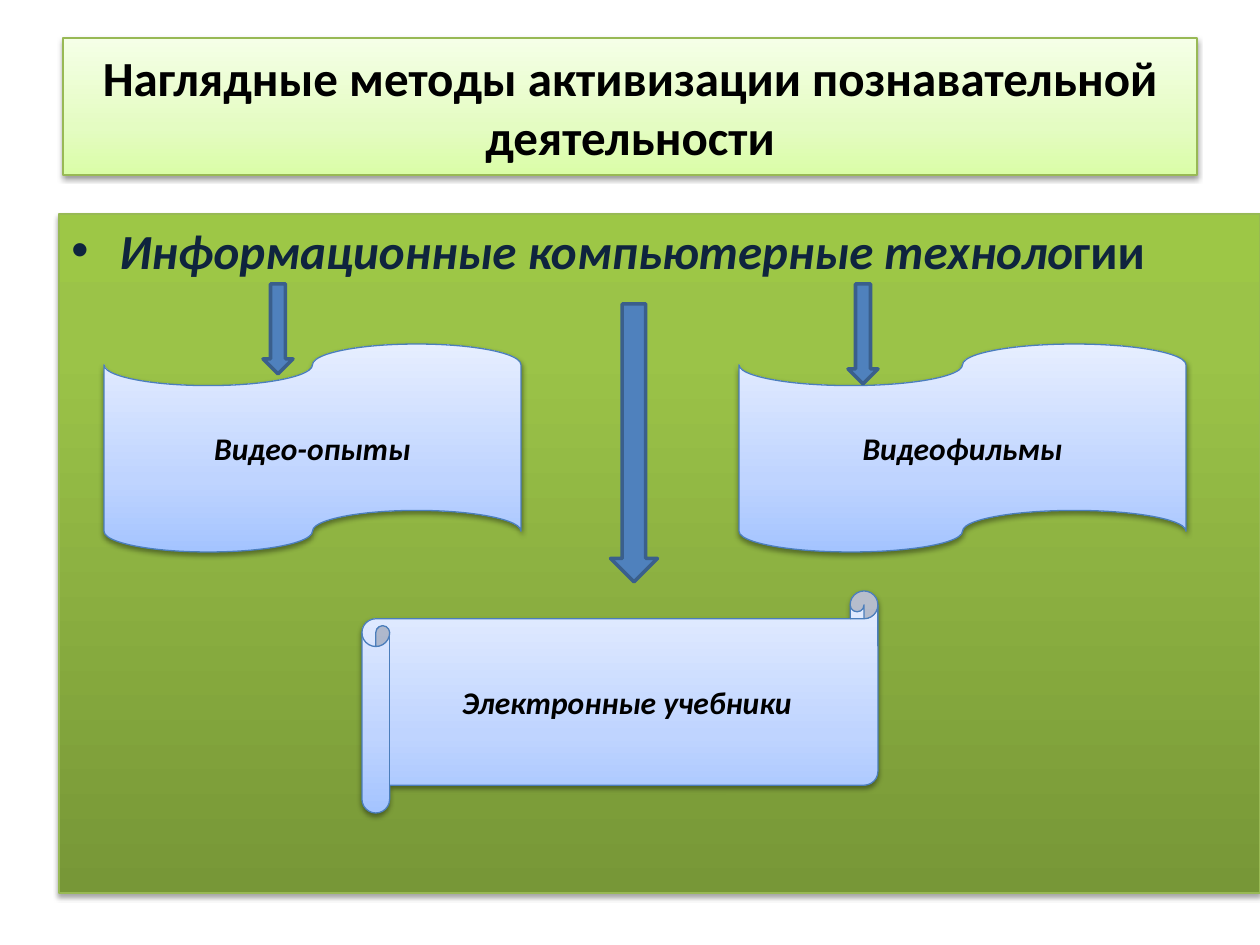
import pptx
import pptx.util
import pptx.dml.color
import pptx.enum.shapes
import pptx.enum.text
import pptx.oxml
import pptx.oxml.ns

PX = 914400 / 126  # EMU in one px
SHAPE = pptx.enum.shapes.MSO_SHAPE
ANCHOR = pptx.enum.text.MSO_ANCHOR
ALIGN = pptx.enum.text.PP_ALIGN

COLORS = {
    "black": "000000", "navy": "0F243E",
    "green_line": "98B955", "blue_line": "4B7EBC",
    "arrow": "4F81BD", "arrow_line": "3A5F8C",
}
# Gradient stops (percent, colour) run from the bottom edge to the top
GRADIENTS = {
    "light": [(0, "DAFDA7"), (35, "E4FCC2"), (100, "F5FFE7")],
    "green": [(0, "779737"), (80, "9BC348"), (100, "9DC746")],
    "blue": [(0, "A4C4FF"), (35, "BFD4FF"), (100, "E6EEFF")],
}

# Looks shared by the panels; shadow is (opacity in percent, distance in points)
STYLES = {
    "title": {"gradient": "light", "line": "green_line", "shadow": (38, 1.6),
              "size": 28, "color": "black", "anchor": ANCHOR.MIDDLE, "align": ALIGN.CENTER},
    "body": {"gradient": "green", "line": "green_line", "shadow": (35, 1.8),
             "size": 28, "color": "navy", "anchor": ANCHOR.TOP, "align": ALIGN.LEFT,
             "bullet": "•"},
    "card": {"gradient": "blue", "line": "blue_line", "shadow": (38, 1.6),
             "size": 18, "color": "black", "anchor": ANCHOR.MIDDLE, "align": ALIGN.CENTER},
}
SHADOW_BLUR = 3.1
BULLET_INDENT = 48

# Two cards share a row
ROW_TOP, ROW_HEIGHT = 344, 208

# Panels, back to front: style, shape, box in px (left, top, width, height),
# text runs (text, italic)
PANELS = [
    ("title", SHAPE.RECTANGLE, (63, 38, 1134, 137),
     [("Наглядные методы активизации познавательной деятельности", False)]),
    ("body", SHAPE.RECTANGLE, (59, 214, 1201, 679),
     [("Информационные компьютерные техноло", True), ("гии", False)]),
    ("card", SHAPE.FLOWCHART_PUNCHED_TAPE, (104, ROW_TOP, 417, ROW_HEIGHT),
     [("Видео-опыты", True)]),
    ("card", SHAPE.FLOWCHART_PUNCHED_TAPE, (739, ROW_TOP, 447, ROW_HEIGHT),
     [("Видеофильмы", True)]),
    ("card", SHAPE.HORIZONTAL_SCROLL, (362, 591, 516, 222),
     [("Электронные учебники", True)]),
]

# Down arrows: centre x, top, width, height in px
ARROWS = [(278, 284, 30, 90), (863, 284, 30, 100), (634, 304, 47, 278)]


def px(n):
    return round(n * PX)


def rgb(name):
    return pptx.dml.color.RGBColor.from_string(COLORS[name])


def xml(tag, inner="", **attrs):
    ns = pptx.oxml.ns.nsdecls("a")
    attr_text = " ".join(f'{key}="{value}"' for key, value in attrs.items())
    return pptx.oxml.parse_xml(f"<a:{tag} {ns} {attr_text}>{inner}</a:{tag}>")


def add_shape(slide, kind, box, line, line_width):
    sp = slide.shapes.add_shape(kind, *map(px, box))
    sp.shadow.inherit = False
    sp.line.color.rgb = rgb(line)
    sp.line.width = pptx.util.Pt(line_width)
    return sp


def set_gradient(sp, stops):
    gs = "".join(f'<a:gs pos="{percent * 1000}"><a:srgbClr val="{color}"/></a:gs>'
                 for percent, color in stops)
    fill = xml("gradFill", f'<a:gsLst>{gs}</a:gsLst><a:lin ang="16200000" scaled="0"/>')
    # The fill must stand before the line in spPr
    sp._element.spPr.find(pptx.oxml.ns.qn("a:ln")).addprevious(fill)


def set_shadow(sp, opacity, distance):
    color = f'<a:srgbClr val="000000"><a:alpha val="{opacity * 1000}"/></a:srgbClr>'
    effects = sp._element.spPr.find(pptx.oxml.ns.qn("a:effectLst"))
    effects.append(xml("outerShdw", color, blurRad=pptx.util.Pt(SHADOW_BLUR),
                       dist=pptx.util.Pt(distance), dir=5400000, rotWithShape=0))


def set_bullet(p, char):
    pPr = p._p.get_or_add_pPr()
    for key, value in {"marL": BULLET_INDENT, "indent": -BULLET_INDENT}.items():
        pPr.set(key, str(px(value)))
    pPr.append(xml("buFont", typeface="Arial"))
    pPr.append(xml("buChar", char=char))


def set_text(sp, runs, style):
    tf = sp.text_frame
    tf.word_wrap = True
    tf.vertical_anchor = style["anchor"]
    p = tf.paragraphs[0]
    p.alignment = style["align"]
    if "bullet" in style:
        set_bullet(p, style["bullet"])
    for text, italic in runs:
        r = p.add_run()
        r.text = text
        r.font.color.rgb = rgb(style["color"])
        font = {"name": "Calibri", "size": pptx.util.Pt(style["size"]),
                "bold": True, "italic": italic}
        for key, value in font.items():
            setattr(r.font, key, value)


def main():
    prs = pptx.Presentation()
    prs.slide_width, prs.slide_height = px(1260), px(945)
    slide = prs.slides.add_slide(prs.slide_layouts[6])

    # Title, body and cards
    for style_name, kind, box, runs in PANELS:
        style = STYLES[style_name]
        sp = add_shape(slide, kind, box, style["line"], 0.75)
        set_gradient(sp, GRADIENTS[style["gradient"]])
        set_shadow(sp, *style["shadow"])
        set_text(sp, runs, style)

    # Arrows from the heading to the cards
    for center, top, width, height in ARROWS:
        box = (center - width / 2, top, width, height)
        sp = add_shape(slide, SHAPE.DOWN_ARROW, box, "arrow_line", 2)
        sp.fill.solid()
        sp.fill.fore_color.rgb = rgb("arrow")

    prs.save("out.pptx")


if __name__ == "__main__":
    main()
